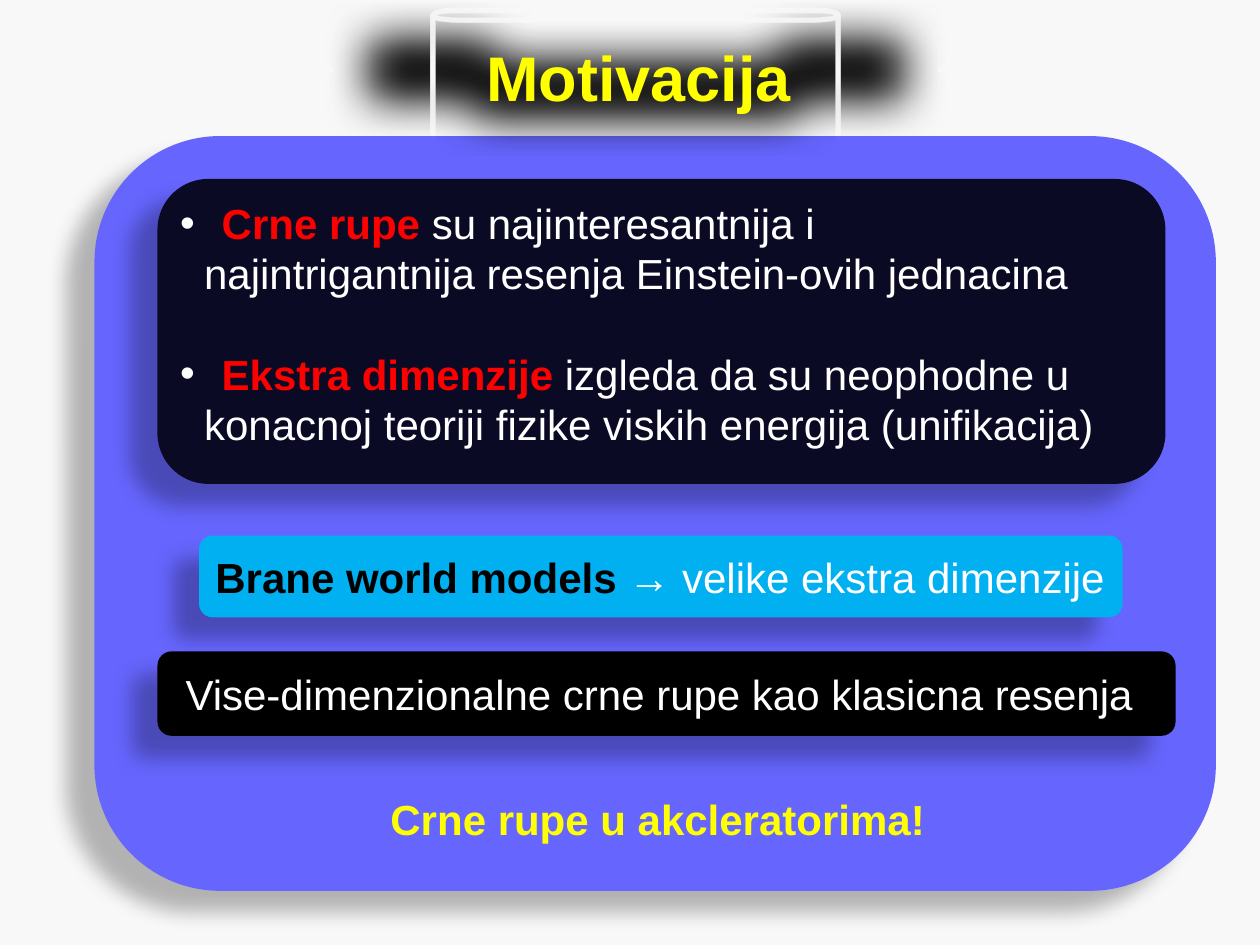
from dataclasses import dataclass

from lxml import etree
from pptx import Presentation
from pptx.dml.color import RGBColor
from pptx.enum import shapes, text
from pptx.oxml.ns import qn
from pptx.util import Emu, Inches, Pt


@dataclass(frozen=True)
class Theme:
    font: str = "Arial"
    body: int = 24
    title: int = 36
    page: str = "F8F8F8"
    panel: str = "6666FF"
    navy: str = "0B0A25"
    cyan: str = "00B0F0"
    black: str = "000000"
    white: str = "FFFFFF"
    red: str = "FF0000"
    yellow: str = "FFFF00"


T = Theme()


def add_block(preset, box, fill, alpha, blur, dist, angle):
    """Add a filled shape with an outer shadow; return it with its effect list."""
    sp = s.shapes.add_shape(preset, *map(Inches, box))
    sp.fill.solid()
    sp.fill.fore_color.rgb = RGBColor.from_string(fill)
    sp.line.fill.background()
    sp.shadow.inherit = False
    effects = sp._element.spPr.find(qn("a:effectLst"))
    shadow = etree.SubElement(effects, qn("a:outerShdw"), blurRad=str(Pt(blur)),
                              dist=str(Pt(dist)), dir=str(angle * 60000),
                              algn="tl", rotWithShape="0")
    clr = etree.SubElement(shadow, qn("a:srgbClr"), val=T.black)
    etree.SubElement(clr, qn("a:alpha"), val=str(alpha * 1000))
    return sp, effects


def write(p, runs, size=T.body):
    """Fill a paragraph from (text, colour, bold) runs."""
    for content, color, bold in runs:
        r = p.add_run()
        r.text = content
        for name, value in {"name": T.font, "size": Pt(size), "bold": bold}.items():
            setattr(r.font, name, value)
        r.font.color.rgb = RGBColor.from_string(color)


prs = Presentation()
prs.slide_width, prs.slide_height = Inches(10), Inches(7.5)
s = prs.slides.add_slide(prs.slide_layouts[1])
s.background.fill.solid()
s.background.fill.fore_color.rgb = RGBColor.from_string(T.page)
title, body = s.placeholders
rounded = shapes.MSO_SHAPE.ROUNDED_RECTANGLE

# Panels, with the text of the two banners
panels = [
    ((0.75, 1.08, 8.9, 5.99), T.panel, 0.1, []),
    ((1.58, 4.25, 7.33, 0.65), T.cyan, 0.1,
     [("Brane world models ", T.black, True),
      ("→ velike ekstra dimenzije", T.white, False)]),
    ((1.25, 1.42, 8, 2.42), T.navy, 0.1, []),
    ((1.25, 5.17, 8.08, 0.67), T.black, 0.19,
     [("Vise-dimenzionalne crne rupe kao klasicna resenja", T.white, False)]),
]
for box, fill, margin, runs in panels:
    sp, _ = add_block(rounded, box, fill, 28, 11.8, 19.7, 141)
    if runs:
        tf = sp.text_frame
        tf.margin_left = Inches(margin)
        tf.vertical_anchor = text.MSO_ANCHOR.MIDDLE
        tf.paragraphs[0].alignment = text.PP_ALIGN.LEFT
        write(tf.paragraphs[0], runs)

# Bulleted list: each point has a lead line and a continuation line
points = [
    ("Crne rupe ", "su najinteresantnija i",
     "najintrigantnija resenja Einstein-ovih jednacina"),
    ("Ekstra dimenzije ", "izgleda da su neophodne u",
     "konacnoj teoriji fizike viskih energija (unifikacija)"),
]
s.shapes._spTree.append(body._element)
body.left, body.top, body.width, body.height = map(Inches, (1.33, 1.52, 7.92, 2.12))
tf = body.text_frame
tf.auto_size = text.MSO_AUTO_SIZE.NONE
tf.vertical_anchor = text.MSO_ANCHOR.TOP
for i, (term, lead, rest) in enumerate(points):
    lines = [
        (0.33, -0.33, 28.7 * i, True, [(term, T.red, True), (lead, T.white, False)]),
        (0.19, 0, 0, False, [(rest, T.white, False)]),
    ]
    for left, indent, before, bullet, runs in lines:
        p = tf.paragraphs[0] if i == 0 and bullet else tf.add_paragraph()
        pPr = p._p.get_or_add_pPr()
        pPr.set("marL", str(Inches(left)))
        pPr.set("indent", str(Inches(indent)))
        if bullet:
            clr = etree.SubElement(pPr, qn("a:buClr"))
            etree.SubElement(clr, qn("a:srgbClr"), val=T.white)
            etree.SubElement(pPr, qn("a:buFont"), typeface=T.font)
            etree.SubElement(pPr, qn("a:buChar"), char="•")
        else:
            etree.SubElement(pPr, qn("a:buNone"))
        p.space_before = Pt(before)
        p.line_spacing = Pt(28.7)
        write(p, runs)

# Closing line
tb = s.shapes.add_textbox(*map(Inches, (3, 6.25, 4.49, 0.51)))
tb.text_frame.word_wrap = False
write(tb.text_frame.paragraphs[0], [("Crne rupe u akcleratorima!", T.yellow, True)])

# Title on a soft-edged ribbon
ribbon, effects = add_block(shapes.MSO_SHAPE.DOWN_RIBBON, (1.83, 0, 6.42, 1.25),
                            T.black, 20, 6, 0, 225)
ribbon.adjustments[0], ribbon.adjustments[1] = 0.125, 0.5
ribbon.line.color.rgb = RGBColor.from_string(T.white)
ribbon.line.width = Pt(3)
etree.SubElement(effects, qn("a:softEdge"), rad=str(Pt(25)))

s.shapes._spTree.append(title._element)
title.left, title.top, title.width, title.height = map(Inches, (3.75, 0.25, 2.64, 0.71))
tf = title.text_frame
tf.auto_size = text.MSO_AUTO_SIZE.NONE
tf.word_wrap = False
write(tf.paragraphs[0], [("Motivacija", T.yellow, True)], T.title)

prs.save("out.pptx")
